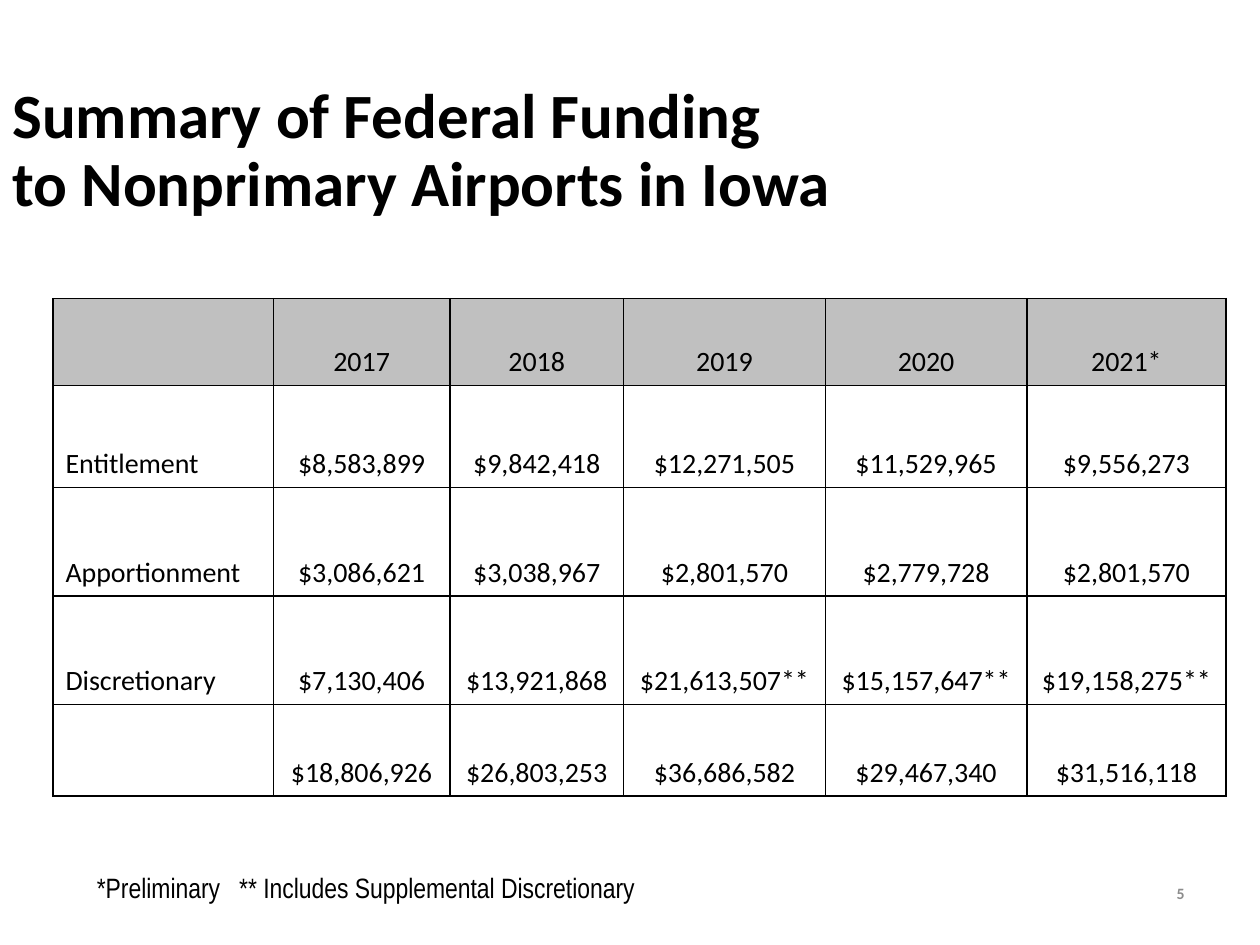
import pptx
import pptx.dml.color
import pptx.enum.text
import pptx.oxml
import pptx.oxml.ns
import pptx.util
from pptx.util import Inches

COLOURS = {"text": "000000", "border": "000000", "header": "C0C0C0",
           "body": "FFFFFF", "number": "8C8C8C"}
ALIGN = pptx.enum.text.PP_ALIGN
ANCHOR = pptx.enum.text.MSO_ANCHOR

COLUMN_WIDTHS = [1.75, 1.4, 1.38, 1.6, 1.6, 1.58]
ROW_HEIGHTS = [0.69, 0.81, 0.86, 0.86, 0.73]
FUNDING = [
    ["", "2017", "2018", "2019", "2020", "2021*"],
    ["Entitlement", "$8,583,899", "$9,842,418", "$12,271,505", "$11,529,965", "$9,556,273"],
    ["Apportionment", "$3,086,621", "$3,038,967", "$2,801,570", "$2,779,728", "$2,801,570"],
    ["Discretionary", "$7,130,406", "$13,921,868", "$21,613,507**", "$15,157,647**",
     "$19,158,275**"],
    ["", "$18,806,926", "$26,803,253", "$36,686,582", "$29,467,340", "$31,516,118"],
]


def rgb(name):
    return pptx.dml.color.RGBColor.from_string(COLOURS[name])


class SlideBuilder:
    def __init__(self, slide, font="Calibri"):
        self.slide = slide
        self.font = font

    def add_spans(self, para, text, size, colour="text", bold=False, font=None):
        """Add text to a paragraph, with a line break at each newline."""
        for index, line in enumerate(text.split("\n")):
            if index:
                para.add_line_break()
            span = para.add_run()
            span.text = line
            span.font.name = font or self.font
            span.font.size = pptx.util.Pt(size)
            span.font.bold = bold
            span.font.color.rgb = rgb(colour)

    def text(self, left, top, width, height, text, size, anchor=ANCHOR.TOP,
             align=ALIGN.LEFT, spacing=1.0, **style):
        box = self.slide.shapes.add_textbox(
            Inches(left), Inches(top), Inches(width), Inches(height))
        frame = box.text_frame
        frame.word_wrap = True
        frame.vertical_anchor = anchor
        para = frame.paragraphs[0]
        para.alignment = align
        para.line_spacing = spacing
        self.add_spans(para, text, size, **style)

    def border(self, cell):
        properties = cell._tc.get_or_add_tcPr()
        for position, side in enumerate(("lnL", "lnR", "lnT", "lnB")):
            line = pptx.oxml.parse_xml(
                f'<a:{side} {pptx.oxml.ns.nsdecls("a")} w="{pptx.util.Pt(1)}"><a:solidFill>'
                f'<a:srgbClr val="{COLOURS["border"]}"/></a:solidFill></a:{side}>')
            properties.insert(position, line)

    def hang(self, para):
        """Give a paragraph a hanging indent."""
        properties = para._p.get_or_add_pPr()
        properties.set("marL", str(Inches(0.38)))
        properties.set("indent", str(Inches(-0.38)))

    def table(self, left, top, widths, heights, rows, size):
        table = self.slide.shapes.add_table(
            len(heights), len(widths), Inches(left), Inches(top),
            Inches(sum(widths)), Inches(sum(heights))).table
        for column, width in zip(table.columns, widths):
            column.width = Inches(width)
        for row, height in zip(table.rows, heights):
            row.height = Inches(height)
        for row_index, row in enumerate(rows):
            for column_index, value in enumerate(row):
                cell = table.cell(row_index, column_index)
                cell.fill.solid()
                cell.fill.fore_color.rgb = rgb("body" if row_index else "header")
                cell.vertical_anchor = ANCHOR.BOTTOM
                self.border(cell)
                if not value:
                    continue
                para = cell.text_frame.paragraphs[0]
                para.alignment = ALIGN.CENTER if column_index else ALIGN.LEFT
                if row_index == 0 or column_index == 0:
                    self.hang(para)
                self.add_spans(para, value, size)


def main():
    deck = pptx.Presentation()
    deck.slide_width, deck.slide_height = Inches(10), Inches(7.5)
    page = SlideBuilder(deck.slides.add_slide(deck.slide_layouts[6]))
    page.text(0, 0.58, 9.83, 1.25,
              "Summary of Federal Funding\nto Nonprimary Airports in Iowa", 36,
              anchor=ANCHOR.MIDDLE, spacing=0.9, bold=True)
    page.table(0.42, 2.37, COLUMN_WIDTHS, ROW_HEIGHTS, FUNDING, 16)
    page.text(7.17, 6.83, 2.33, 0.52, "5", 9, anchor=ANCHOR.MIDDLE,
              align=ALIGN.RIGHT, colour="number", bold=True)
    page.text(0.67, 6.86, 4.92, 0.64,
              "*Preliminary   ** Includes Supplemental Discretionary", 16,
              font="Arial Narrow")
    deck.save("out.pptx")


if __name__ == "__main__":
    main()
